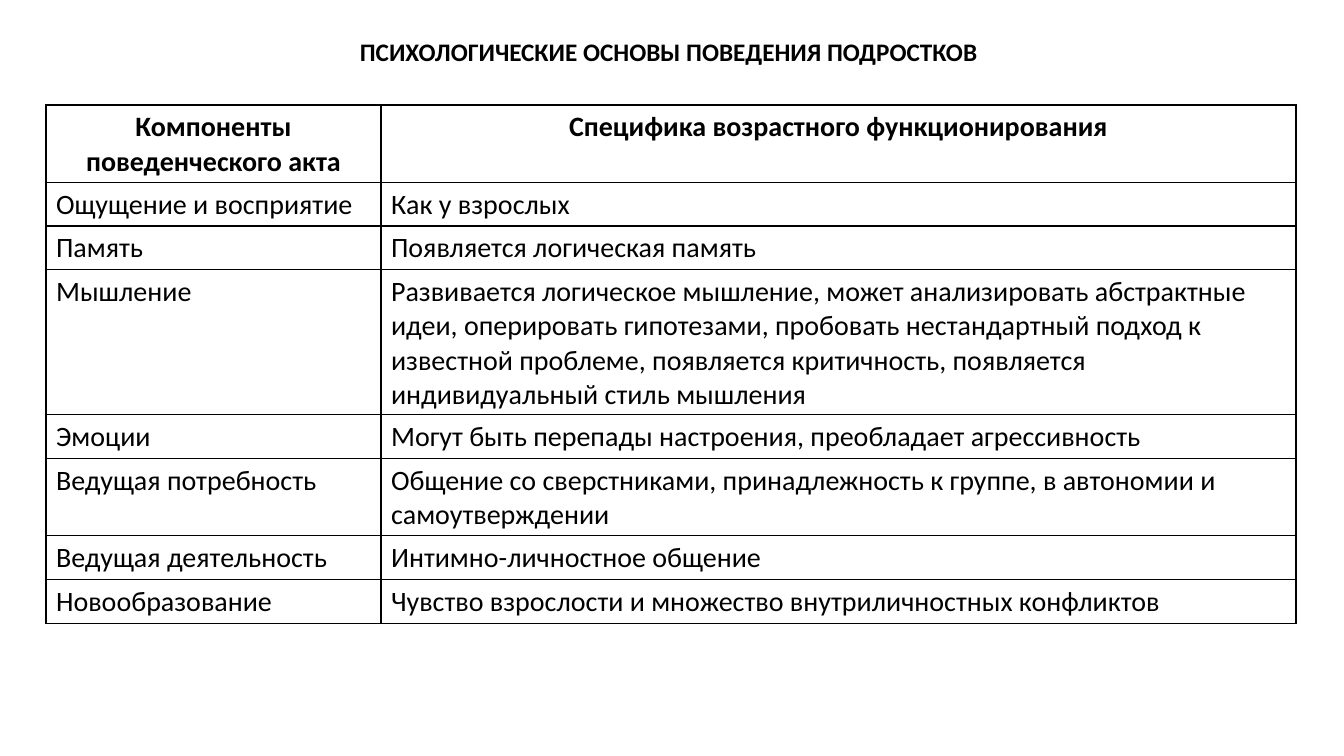
from dataclasses import dataclass

from lxml.etree import SubElement
from pptx import Presentation
from pptx.dml.color import RGBColor
from pptx.enum.text import MSO_AUTO_SIZE, PP_ALIGN as Align
from pptx.oxml.ns import qn
from pptx.util import Emu, Pt

TITLE = "ПСИХОЛОГИЧЕСКИЕ ОСНОВЫ ПОВЕДЕНИЯ ПОДРОСТКОВ"
HEADER = ("Компоненты поведенческого акта", "Специфика возрастного функционирования")
# component, its features, alignment of the features, lines of text
COMPONENTS = [
    ("Ощущение и восприятие", "Как у взрослых", Align.JUSTIFY, 1),
    ("Память", "Появляется логическая память", Align.JUSTIFY, 1),
    ("Мышление",
     "Развивается логическое мышление, может анализировать абстрактные идеи, "
     "оперировать гипотезами, пробовать нестандартный подход к известной проблеме, "
     "появляется критичность, появляется индивидуальный стиль мышления", Align.LEFT, 4),
    ("Эмоции", "Могут быть перепады настроения, преобладает агрессивность", Align.LEFT, 1),
    ("Ведущая потребность",
     "Общение со сверстниками, принадлежность к группе, в автономии и самоутверждении",
     Align.LEFT, 2),
    ("Ведущая деятельность", "Интимно-личностное общение", Align.LEFT, 1),
    ("Новообразование", "Чувство взрослости и множество внутриличностных конфликтов",
     Align.LEFT, 1),
]
HEADER_LINES = 2


@dataclass(frozen=True)
class Theme:
    font: str = "Calibri"
    ink: str = "000000"
    title_size: int = 18
    table_size: int = 20
    border: int = 1


THEME = Theme()
SLIDE = (1344, 756)
TITLE_BOX = (350, 31, 644, 40)
TABLE_LEFT, TABLE_TOP = 46, 105
COLUMNS = (335, 915)
LINE_HEIGHT, ROW_PADDING = 34, 9


def px(n):
    return Emu(round(n * 914400 / 100.8))


def write(tf, text, size, bold=False, align=Align.LEFT):
    p = tf.paragraphs[0]
    p.alignment = align
    r = p.add_run()
    r.text = text
    r.font.name = THEME.font
    r.font.size = Pt(size)
    r.font.bold = bold
    r.font.color.rgb = RGBColor.from_string(THEME.ink)


def outline(cell):
    """Draw all four borders of a cell, then clear its fill."""
    props = cell._tc.get_or_add_tcPr()
    for side in ("lnL", "lnR", "lnT", "lnB"):
        line = SubElement(props, qn(f"a:{side}"), w=str(Pt(THEME.border)))
        fill = SubElement(line, qn("a:solidFill"))
        SubElement(fill, qn("a:srgbClr"), val=THEME.ink)
    cell.fill.background()


def add_title(slide):
    tf = slide.shapes.add_textbox(*map(px, TITLE_BOX)).text_frame
    tf.word_wrap = False
    tf.auto_size = MSO_AUTO_SIZE.SHAPE_TO_FIT_TEXT
    write(tf, TITLE, THEME.title_size, bold=True)


def add_components_table(slide):
    lines = [HEADER_LINES] + [row[3] for row in COMPONENTS]
    heights = [ROW_PADDING + LINE_HEIGHT * n for n in lines]
    table = slide.shapes.add_table(
        len(heights), len(COLUMNS), px(TABLE_LEFT), px(TABLE_TOP),
        px(sum(COLUMNS)), px(sum(heights))).table
    table.horz_banding = False
    for column, width in zip(table.columns, COLUMNS):
        column.width = px(width)
    for row, height in zip(table.rows, heights):
        row.height = px(height)
    for cell in table.iter_cells():
        outline(cell)

    for c, text in enumerate(HEADER):
        write(table.cell(0, c).text_frame, text, THEME.table_size, True, Align.CENTER)
    for r, (component, features, align, _) in enumerate(COMPONENTS, 1):
        write(table.cell(r, 0).text_frame, component, THEME.table_size)
        write(table.cell(r, 1).text_frame, features, THEME.table_size, align=align)


def main():
    prs = Presentation()
    prs.slide_width, prs.slide_height = map(px, SLIDE)
    slide = prs.slides.add_slide(prs.slide_layouts[6])
    add_title(slide)
    add_components_table(slide)
    prs.save("out.pptx")


if __name__ == "__main__":
    main()
